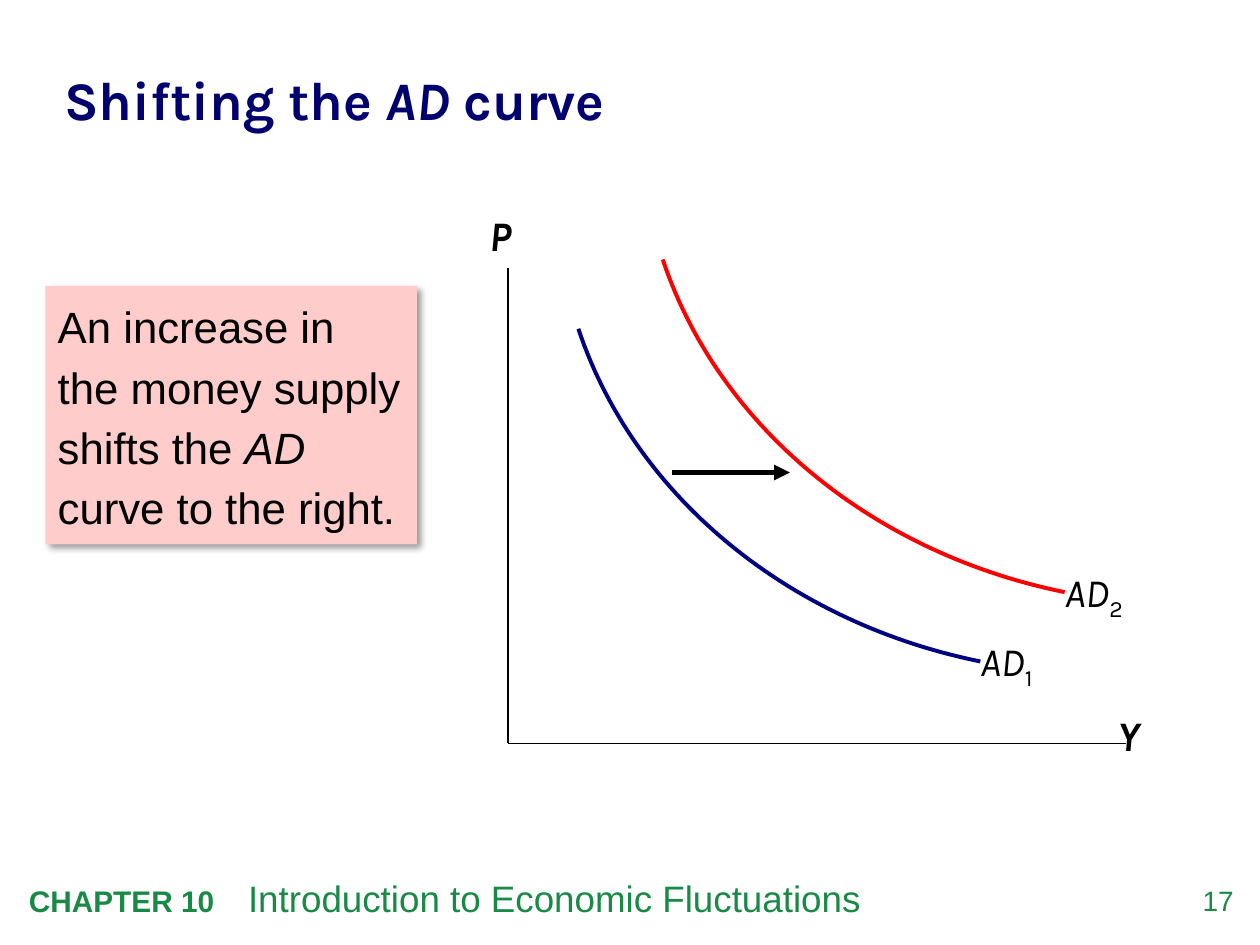
from lxml import etree
from pptx import Presentation
from pptx.dml.color import RGBColor
from pptx.enum.shapes import MSO_CONNECTOR, MSO_SHAPE
from pptx.enum.text import MSO_ANCHOR, PP_ALIGN
from pptx.oxml.ns import qn
from pptx.util import Inches, Pt

STRAIGHT, RECTANGLE = MSO_CONNECTOR.STRAIGHT, MSO_SHAPE.RECTANGLE
TOP, MIDDLE = MSO_ANCHOR.TOP, MSO_ANCHOR.MIDDLE
LEFT, CENTER, RIGHT = PP_ALIGN.LEFT, PP_ALIGN.CENTER, PP_ALIGN.RIGHT

BLACK = RGBColor(0x00, 0x00, 0x00)
NAVY = RGBColor(0x00, 0x00, 0x6E)
BLUE = RGBColor(0x00, 0x00, 0x82)
RED = RGBColor(0xFF, 0x00, 0x00)
PINK = RGBColor(0xFF, 0xCC, 0xCC)
GREEN = RGBColor(0x19, 0x8A, 0x46)

TITLE = {"name": "Karla", "size": Pt(31), "color": NAVY, "bold": True}
BODY = {"name": "Arial", "size": Pt(25), "color": BLACK}
AXIS = {"name": "Karla", "size": Pt(24), "color": BLACK, "bold": True, "italic": True}
CURVE = {"name": "Karla", "size": Pt(23), "color": BLACK}
FOOTER = {"name": "Arial", "size": Pt(21), "color": GREEN}
CHAPTER = {"size": Pt(17), "bold": True}
NUMBER = {"size": Pt(16)}
ITALIC = {"italic": True}

# Cubic curve, relative to the top left of its box
CURVE_POINTS = [(3.19, 3.7), (1.66, 3.39), (0.44, 2.38), (0, 1.06)]
CURVE_STEPS = 60


def add_element(parent, tag, **attributes):
    return etree.SubElement(parent, qn(tag), attributes)


def fill_text(shape, spans, base, align=LEFT, anchor=TOP, spacing=None, inset=True):
    """Write one paragraph; each span is (text, changes to the base format)."""
    frame = shape.text_frame
    frame.word_wrap = True
    frame.vertical_anchor = anchor
    if not inset:
        for side in ("left", "top", "right", "bottom"):
            setattr(frame, f"margin_{side}", 0)
    para = frame.paragraphs[0]
    para.alignment = align
    if spacing:
        para.line_spacing = spacing
    for text, changes in spans:
        span = para.add_run()
        span.text = text
        for key, value in {**base, **changes}.items():
            if key == "color":
                span.font.color.rgb = value
            else:
                setattr(span.font, key, value)
    return para


def add_text(page, box, spans, base, **layout):
    shape = page.shapes.add_textbox(*map(Inches, box))
    return fill_text(shape, spans, base, **layout)


def add_line(page, start, end, width):
    line = page.shapes.add_connector(STRAIGHT, *map(Inches, start + end))
    line.line.color.rgb = BLACK
    line.line.width = Pt(width)
    add_element(line._element.spPr, "a:effectLst")
    return line


def add_title(page, box):
    spans = [("Shifting the ", {}), ("AD", ITALIC), (" curve", {})]
    add_text(page, box, spans, TITLE, anchor=MIDDLE, spacing=1.05, inset=False)


def add_note(page, box):
    note = page.shapes.add_shape(RECTANGLE, *map(Inches, box))
    note.fill.solid()
    note.fill.fore_color.rgb = PINK
    note.line.fill.background()
    effects = add_element(note._element.spPr, "a:effectLst")
    shadow = add_element(effects, "a:outerShdw", blurRad=str(Pt(4)), dist=str(Pt(3)),
                         dir="2700000", algn="tl", rotWithShape="0")
    color = add_element(shadow, "a:srgbClr", val=str(BLACK))
    add_element(color, "a:alpha", val="40000")
    spans = [("An increase in the money supply shifts the ", {}),
             ("AD", ITALIC), (" curve to the right.", {})]
    fill_text(note, spans, BODY, spacing=1.15)


def add_axes(page, box):
    left, top, width, height = box
    bottom = top + height
    add_line(page, (left, top), (left, bottom), 1)
    add_line(page, (left, bottom), (left + width, bottom), 1)
    add_text(page, (left + 4.55, bottom - 0.32, 0.84, 0.5), [("Y ", {})], AXIS, align=CENTER)
    add_text(page, (left - 0.36, top - 0.52, 0.6, 0.5), [("P", {})], AXIS, align=CENTER)


def curve_point(step):
    t = step / CURVE_STEPS
    weights = ((1 - t) ** 3, 3 * t * (1 - t) ** 2, 3 * t * t * (1 - t), t ** 3)
    return [sum(w * point[axis] for w, point in zip(weights, CURVE_POINTS))
            for axis in (0, 1)]


def add_demand_curve(page, left, top, color, index):
    points = [(Inches(left + x), Inches(top + y))
              for x, y in map(curve_point, range(CURVE_STEPS + 1))]
    builder = page.shapes.build_freeform(*points[0])
    builder.add_line_segments(points[1:], close=False)
    curve = builder.convert_to_shape()
    curve.shadow.inherit = False
    curve.fill.background()
    curve.line.color.rgb = color
    curve.line.width = Pt(2.25)
    label = add_text(page, (left + 3.09, top + 3.45, 0.75, 0.48),
                     [("AD", ITALIC), (index, {})], CURVE)
    label.runs[1].font._element.set("baseline", "-25000")


def add_shift_arrow(page, start, end):
    arrow = add_line(page, start, end, 3)
    add_element(arrow.line._get_or_add_ln(), "a:tailEnd", type="triangle")


def add_footer(page, box):
    left, top, width, height = box
    para = add_text(page, box, [("CHAPTER 10\t", CHAPTER),
                                ("Introduction to Economic Fluctuations", {})], FOOTER)
    tabs = add_element(para._p.get_or_add_pPr(), "a:tabLst")
    add_element(tabs, "a:tab", pos=str(Inches(1.74)), algn="l")
    add_text(page, (left + 9.11, top + 0.11, 0.55, 0.32), [("17", NUMBER)], FOOTER,
             align=RIGHT, inset=False)


def main():
    deck = Presentation()
    deck.slide_width, deck.slide_height = Inches(10), Inches(7.5)
    page = deck.slides.add_slide(deck.slide_layouts[6])
    add_footer(page, (0.13, 6.9, 8.18, 0.45))
    add_title(page, (0.51, 0.26, 9.02, 1.03))
    add_note(page, (0.36, 2.27, 2.95, 2.05))
    add_axes(page, (4.03, 2.13, 4.91, 3.77))
    add_demand_curve(page, 4.59, 1.55, BLUE, "1")
    add_demand_curve(page, 5.26, 1, RED, "2")
    add_shift_arrow(page, (5.33, 3.75), (6.27, 3.75))
    deck.save("out.pptx")


if __name__ == "__main__":
    main()
